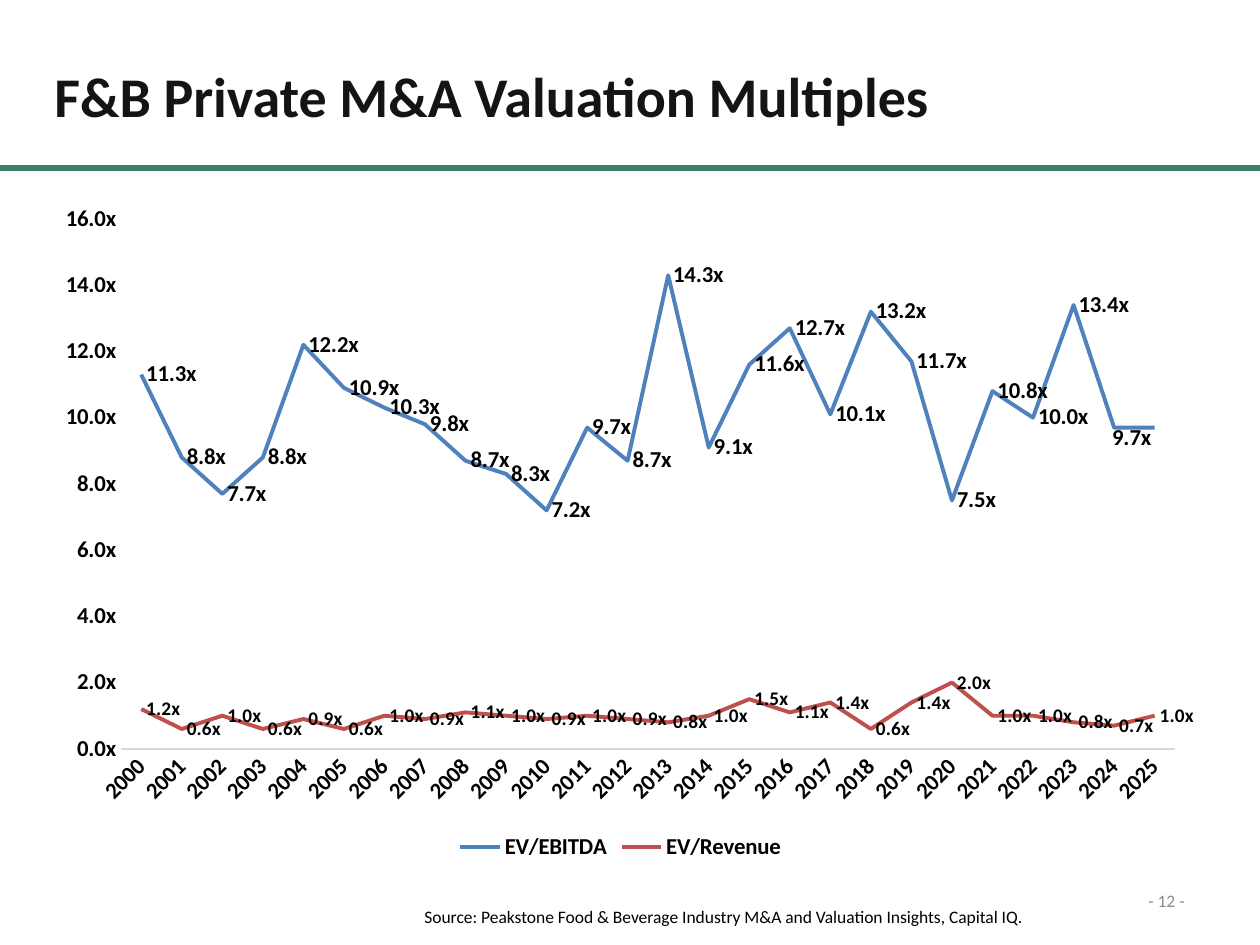
from lxml import etree
from pptx import Presentation
from pptx.chart.data import CategoryChartData
from pptx.dml.color import RGBColor
from pptx.enum.chart import XL_CHART_TYPE, XL_LABEL_POSITION, XL_LEGEND_POSITION, XL_TICK_MARK
from pptx.enum.shapes import MSO_CONNECTOR
from pptx.enum.text import MSO_ANCHOR, MSO_AUTO_SIZE, PP_ALIGN
from pptx.oxml import parse_xml
from pptx.oxml.ns import nsdecls, qn
from pptx.util import Emu, Pt

LINE = XL_CHART_TYPE.LINE
LABEL_RIGHT = XL_LABEL_POSITION.RIGHT
LEGEND_BOTTOM = XL_LEGEND_POSITION.BOTTOM
NO_TICK = XL_TICK_MARK.NONE
STRAIGHT = MSO_CONNECTOR.STRAIGHT
MIDDLE, TOP = MSO_ANCHOR.MIDDLE, MSO_ANCHOR.TOP
LEFT, RIGHT = PP_ALIGN.LEFT, PP_ALIGN.RIGHT
FIT_SHAPE, NO_FIT = MSO_AUTO_SIZE.SHAPE_TO_FIT_TEXT, MSO_AUTO_SIZE.NONE

FONT = "Calibri"
FORMAT = "0.0\\x"
COLORS = {"rule": "3C7D69", "title": "141414", "number": "8C8C8C", "text": "000000",
          "axis": "D9D9D9", "ebitda": "4F81BD", "revenue": "C0504D"}

TEXTS = [
    ("F&B Private M&A Valuation Multiples", (42, 55, 908, 81), 32, True, "title", LEFT, TOP, False),
    ("- 12 -", (1092, 876, 105, 50), 10, False, "number", RIGHT, MIDDLE, True),
    ("Source: Peakstone Food & Beverage Industry M&A and Valuation Insights, Capital IQ.",
     (412, 900, 639, 34), 10, False, "text", LEFT, TOP, False),
]

YEARS = [str(year) for year in range(2000, 2026)]
SERIES = [
    ("EV/EBITDA", "ebitda", 13,
     [11.3, 8.8, 7.7, 8.8, 12.2, 10.9, 10.3, 9.8, 8.7, 8.3, 7.2, 9.7, 8.7,
      14.3, 9.1, 11.6, 12.7, 10.1, 13.2, 11.7, 7.5, 10.8, 10, 13.4, 9.7, 9.7]),
    ("EV/Revenue", "revenue", 11,
     [1.2, 0.6, 1, 0.6, 0.9, 0.6, 1, 0.9, 1.1, 1, 0.9, 1, 0.9,
      0.8, 1, 1.5, 1.1, 1.4, 0.6, 1.4, 2, 1, 1, 0.8, 0.7, 1]),
]
CHART_BOX = (43, 193, 1155, 673)
PLOT_BOX = (121, 219, 1054, 530)
SHIFTED_LABEL, SHIFT = YEARS.index("2024"), (-7, 11)
HIDDEN_LABEL = YEARS.index("2025")


def px(n):
    return Emu(round(n * 914400 / 126))


def rgb(name):
    return RGBColor.from_string(COLORS[name])


def set_font(font, size, bold=True, color="text"):
    font.name, font.size, font.bold = FONT, Pt(size), bold
    font.color.rgb = rgb(color)


def add_text(slide, text, box, size, bold, color, align, anchor, wrap):
    tf = slide.shapes.add_textbox(*map(px, box)).text_frame
    tf.word_wrap = wrap
    tf.auto_size = NO_FIT if wrap else FIT_SHAPE
    tf.vertical_anchor = anchor
    p = tf.paragraphs[0]
    p.text, p.alignment = text, align
    set_font(p.font, size, bold, color)


def layout(tags):
    body = "".join(f'<c:{tag} val="{value}"/>' for tag, value in tags)
    return parse_xml(f'<c:layout {nsdecls("c")}><c:manualLayout>{body}</c:manualLayout></c:layout>')


def add_rule(slide):
    line = slide.shapes.add_connector(STRAIGHT, 0, px(168), px(1260), px(168))
    line.line.color.rgb = rgb("rule")
    line.line.width = Pt(3)
    etree.SubElement(line._element.spPr, qn("a:effectLst"))


def style_axes(chart):
    cat, val = chart.category_axis, chart.value_axis
    for axis in (cat, val):
        axis.major_tick_mark = axis.minor_tick_mark = NO_TICK
        axis.has_major_gridlines = False
        set_font(axis.tick_labels.font, 13)
    cat.format.line.color.rgb = rgb("axis")
    cat.format.line.width = Pt(0.75)
    cat._element.find(qn("c:txPr")).find(qn("a:bodyPr")).set("rot", "-2700000")
    val.format.line.fill.background()
    val.minimum_scale, val.maximum_scale, val.major_unit = 0, 16, 2
    val.tick_labels.number_format = FORMAT
    val.tick_labels.number_format_is_linked = False


def style_series(chart):
    for s, (_, color, size, _) in zip(chart.plots[0].series, SERIES):
        s.smooth = False
        s.format.line.color.rgb = rgb(color)
        s.format.line.width = Pt(2.25)
        labels = s.data_labels
        labels.show_value = True
        labels.position = LABEL_RIGHT
        labels.number_format = FORMAT
        labels.number_format_is_linked = False
        set_font(labels.font, size)


def adjust_labels(s):
    label = s.points[SHIFTED_LABEL].data_label
    set_font(label.font, 13)
    label.position = LABEL_RIGHT
    shifts = [(tag, round(d / size, 3)) for tag, d, size in zip("xy", SHIFT, CHART_BOX[2:])]
    dlbl = s.data_labels._element.find(qn("c:dLbl"))
    dlbl.insert(1, layout(shifts))
    dlbl.addnext(parse_xml(f'<c:dLbl {nsdecls("c")}><c:idx val="{HIDDEN_LABEL}"/>'
                           '<c:delete val="1"/></c:dLbl>'))


def place_plot(chart):
    x, y, w, h = CHART_BOX
    left, top, width, height = PLOT_BOX
    area = chart._chartSpace.chart.plotArea
    for old in area.findall(qn("c:layout")):
        area.remove(old)
    area.insert(0, layout([
        ("layoutTarget", "inner"), ("xMode", "edge"), ("yMode", "edge"),
        ("x", round((left - x) / w, 4)), ("y", round((top - y) / h, 4)),
        ("w", round(width / w, 4)), ("h", round(height / h, 4))]))


def add_multiples_chart(slide):
    data = CategoryChartData(number_format=FORMAT)
    data.categories = YEARS
    for name, _, _, values in SERIES:
        data.add_series(name, values)
    chart = slide.shapes.add_chart(LINE, *map(px, CHART_BOX), data).chart
    chart.has_title = False
    set_font(chart.font, 13)
    chart.has_legend = True
    chart.legend.position = LEGEND_BOTTOM
    chart.legend.include_in_layout = False
    set_font(chart.legend.font, 13)
    chart.plots[0].vary_by_categories = False
    style_axes(chart)
    style_series(chart)
    adjust_labels(chart.plots[0].series[0])
    place_plot(chart)


def main():
    prs = Presentation()
    prs.slide_width, prs.slide_height = px(1260), px(945)
    slide = prs.slides.add_slide(prs.slide_layouts[6])
    add_rule(slide)
    for item in TEXTS:
        add_text(slide, *item)
    add_multiples_chart(slide)
    prs.save("out.pptx")


if __name__ == "__main__":
    main()
